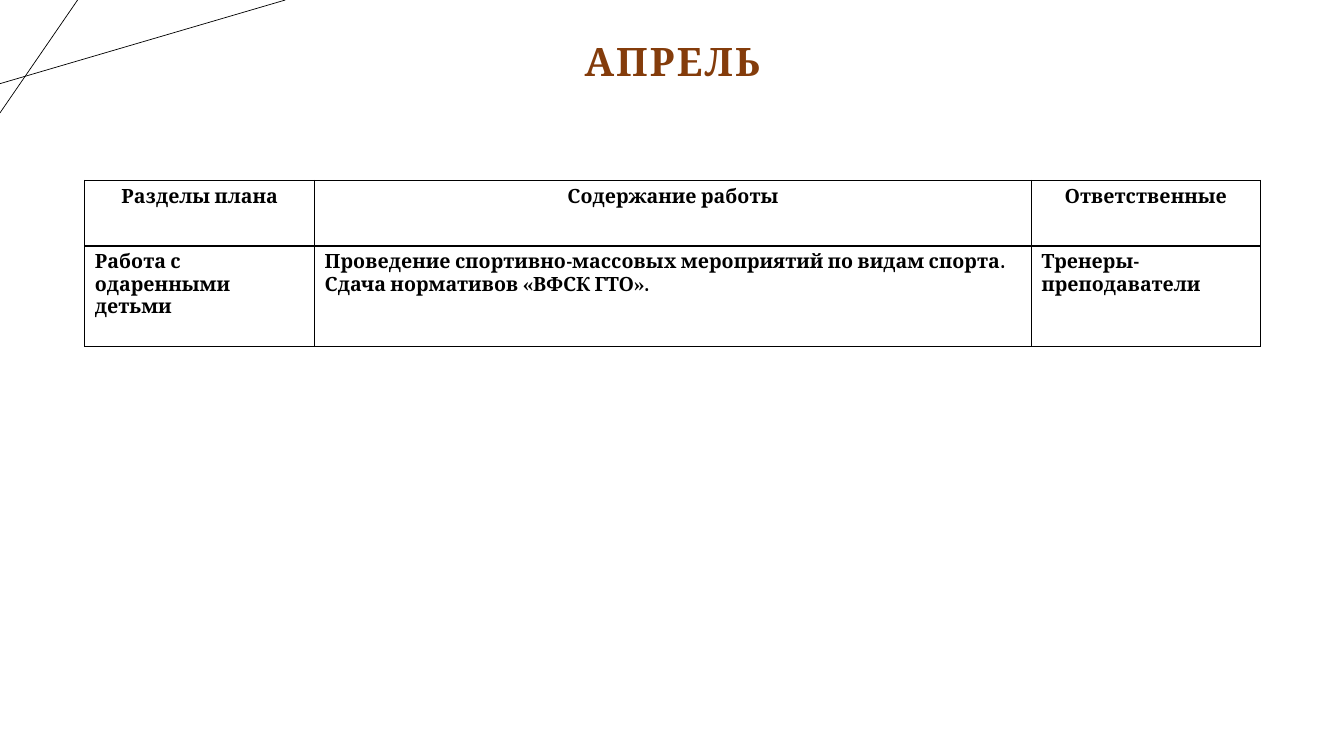
import pptx
import pptx.dml.color
import pptx.enum.shapes
import pptx.enum.text
import pptx.oxml
import pptx.util
from pptx.util import Inches

BLACK = pptx.dml.color.RGBColor(0x00, 0x00, 0x00)
BROWN = pptx.dml.color.RGBColor(0x84, 0x3C, 0x0B)
FONT = "Cambria"
ALIGN = pptx.enum.text.PP_ALIGN
NAMESPACE = 'xmlns:a="http://schemas.openxmlformats.org/drawingml/2006/main"'

CORNER_LINES = [(0, 0.83, 2.83, 0), (0.77, 0, 0, 1.12)]
COLUMN_WIDTHS = [2.28, 7.11, 2.27]
ROW_HEIGHTS = [0.65, 1.0]
PLAN = [
    ["Разделы плана", "Содержание работы", "Ответственные"],
    [
        "Работа с одаренными детьми",
        "Проведение спортивно-массовых мероприятий по видам спорта.\n"
        "Сдача нормативов «ВФСК ГТО».",
        "Тренеры-преподаватели",
    ],
]


def write_text(frame, text, size=14, color=BLACK, align=ALIGN.LEFT, line_spacing=None, tracking=None):
    frame.word_wrap = True
    frame.text = text
    for paragraph in frame.paragraphs:
        paragraph.alignment = align
        paragraph.line_spacing = line_spacing
        for run in paragraph.runs:
            run.font.name = FONT
            run.font.size = pptx.util.Pt(size)
            run.font.bold = True
            run.font.color.rgb = color
            if tracking:
                run.font._element.set("spc", str(int(tracking * 100)))


def add_corner_line(slide, x1, y1, x2, y2):
    corner_line = slide.shapes.add_connector(
        pptx.enum.shapes.MSO_CONNECTOR.STRAIGHT, Inches(x1), Inches(y1), Inches(x2), Inches(y2)
    )
    corner_line.line.color.rgb = BLACK
    corner_line.line.width = pptx.util.Pt(0.5)
    corner_line._element.spPr.append(pptx.oxml.parse_xml(f"<a:effectLst {NAMESPACE}/>"))


def add_month(slide, month):
    heading = slide.shapes.add_textbox(Inches(0.92), Inches(0.26), Inches(11.5), Inches(0.74))
    write_text(heading.text_frame, month, size=28, color=BROWN, align=ALIGN.CENTER,
               line_spacing=0.9, tracking=1.5)
    heading.text_frame.vertical_anchor = pptx.enum.text.MSO_ANCHOR.MIDDLE


def set_borders(cell):
    properties = cell._tc.get_or_add_tcPr()
    for position, side in enumerate(["lnL", "lnR", "lnT", "lnB"]):
        border = pptx.oxml.parse_xml(
            f'<a:{side} {NAMESPACE} w="{pptx.util.Pt(1)}">'
            f'<a:solidFill><a:srgbClr val="{BLACK}"/></a:solidFill></a:{side}>'
        )
        properties.insert(position, border)


def add_plan(slide):
    plan = slide.shapes.add_table(
        len(PLAN), len(COLUMN_WIDTHS), Inches(0.84), Inches(1.79),
        Inches(sum(COLUMN_WIDTHS)), Inches(sum(ROW_HEIGHTS))
    ).table
    plan.horz_banding = False
    for column, width in zip(plan.columns, COLUMN_WIDTHS):
        column.width = Inches(width)
    for row_index, (row, height, texts) in enumerate(zip(plan.rows, ROW_HEIGHTS, PLAN)):
        row.height = Inches(height)
        for cell, text in zip(row.cells, texts):
            cell.fill.background()
            set_borders(cell)
            write_text(cell.text_frame, text, align=ALIGN.LEFT if row_index else ALIGN.CENTER)


def main():
    presentation = pptx.Presentation()
    presentation.slide_width = Inches(13.33)
    presentation.slide_height = Inches(7.5)
    slide = presentation.slides.add_slide(presentation.slide_layouts[6])
    for ends in CORNER_LINES:
        add_corner_line(slide, *ends)
    add_month(slide, "АПРЕЛЬ")
    add_plan(slide)
    presentation.save("out.pptx")


if __name__ == "__main__":
    main()
